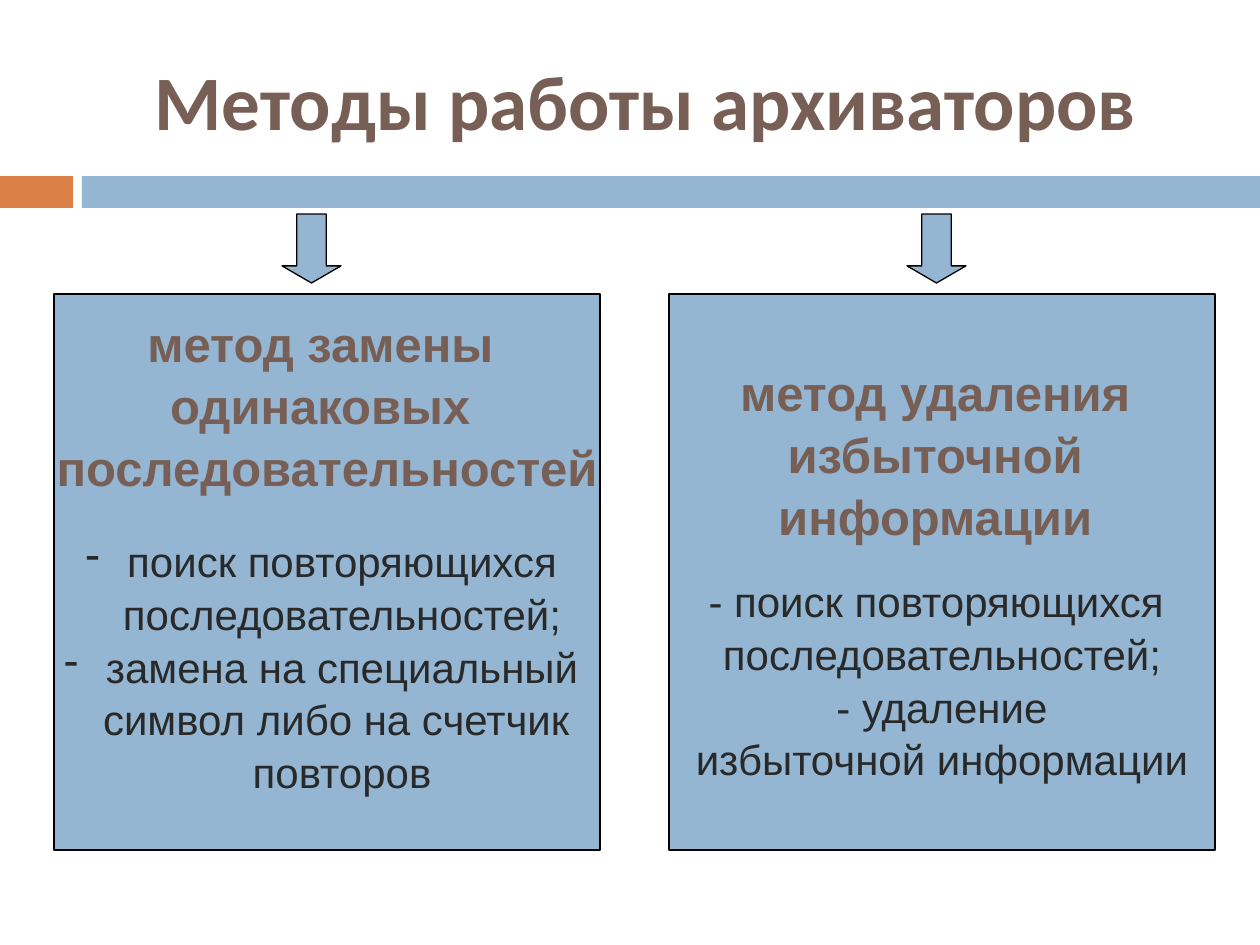
import dataclasses

import lxml.etree
import pptx
import pptx.dml.color
import pptx.enum.shapes
import pptx.enum.text
import pptx.oxml.ns
import pptx.util

SHAPES = pptx.enum.shapes.MSO_SHAPE
EMU_PER_PX = 914400 / 126


@dataclasses.dataclass(frozen=True)
class Theme:
    blue: str = "94B6D2"
    orange: str = "DD8047"
    brown: str = "775F55"
    dark: str = "292929"
    outline: str = "000000"
    title_font: str = "Calibri"
    body_font: str = "Arial"
    title_size: int = 44
    heading_size: int = 28
    body_size: int = 24


THEME = Theme()


def px(length):
    return pptx.util.Emu(round(length * EMU_PER_PX))


def rgb(value):
    return pptx.dml.color.RGBColor.from_string(value)


def write(para, text, *, size, color, font=THEME.body_font, bold=False,
          line_spacing=1.05, space_before=0):
    para.alignment = pptx.enum.text.PP_ALIGN.CENTER
    para.line_spacing = line_spacing
    para.space_before = pptx.util.Pt(space_before)
    for index, line in enumerate(text.split("\n")):
        if index:
            para.add_line_break()
        span = para.add_run()
        span.text = line
        span.font.name = font
        span.font.size = pptx.util.Pt(size)
        span.font.bold = bold
        span.font.color.rgb = rgb(color)


def add_bullet(para, mark, indent):
    properties = para._p.get_or_add_pPr()
    properties.set("marL", str(px(indent)))
    properties.set("indent", str(-px(indent)))
    bullet = lxml.etree.SubElement(properties, pptx.oxml.ns.qn("a:buChar"))
    bullet.set("char", mark)


def add_block(page, kind, left, top, width, height, fill, outline=None):
    shape = page.shapes.add_shape(kind, px(left), px(top), px(width), px(height))
    shape.shadow.inherit = False
    shape.fill.solid()
    shape.fill.fore_color.rgb = rgb(fill)
    if outline:
        shape.line.color.rgb = rgb(outline)
        shape.line.width = pptx.util.Pt(0.75)
    else:
        shape.line.fill.background()
    return shape


def add_title(page, text):
    title = page.shapes.title
    title.left, title.top, title.width, title.height = map(px, (84, 32, 1124, 136))
    frame = title.text_frame
    frame.auto_size = pptx.enum.text.MSO_AUTO_SIZE.NONE
    frame.vertical_anchor = pptx.enum.text.MSO_ANCHOR.MIDDLE
    write(frame.paragraphs[0], text, size=THEME.title_size, color=THEME.brown,
          font=THEME.title_font, bold=True, line_spacing=1.0)


def add_arrow(page, left):
    arrow = add_block(page, SHAPES.DOWN_ARROW, left, 214, 59, 69,
                      THEME.blue, THEME.outline)
    arrow.adjustments[0] = 0.5
    arrow.adjustments[1] = 0.29


def add_method(page, left, heading, steps, gap, bullet=None, bottom_inset=6):
    box = add_block(page, SHAPES.RECTANGLE, left, 294, 546, 556,
                    THEME.blue, THEME.outline)
    frame = box.text_frame
    frame.word_wrap = False
    frame.vertical_anchor = pptx.enum.text.MSO_ANCHOR.MIDDLE
    frame.margin_top = px(6)
    frame.margin_bottom = px(bottom_inset)
    for index, line in enumerate(heading):
        para = frame.add_paragraph() if index else frame.paragraphs[0]
        write(para, line, size=THEME.heading_size, color=THEME.brown, bold=True)
    for index, step in enumerate(steps):
        para = frame.add_paragraph()
        write(para, step, size=THEME.body_size, color=THEME.dark,
              space_before=0 if index else gap)
        if bullet:
            add_bullet(para, bullet, 30)


def main():
    deck = pptx.Presentation()
    deck.slide_width, deck.slide_height = px(1260), px(945)
    page = deck.slides.add_slide(deck.slide_layouts.get_by_name("Title Only"))

    add_block(page, SHAPES.RECTANGLE, 0, 176, 73, 32, THEME.orange)
    add_block(page, SHAPES.RECTANGLE, 82, 176, 1178, 32, THEME.blue)
    add_title(page, "Методы работы архиваторов")

    add_method(
        page, 54,
        ["метод замены ", "одинаковых ", "последовательностей"],
        [" поиск повторяющихся \nпоследовательностей;",
         " замена на специальный \nсимвол либо на счетчик \nповторов"],
        gap=21, bullet="-", bottom_inset=42)
    add_method(
        page, 669,
        ["метод удаления ", "избыточной ", "информации "],
        ["- поиск повторяющихся \nпоследовательностей;",
         " - удаление \nизбыточной информации"],
        gap=16)
    for left in (282, 907):
        add_arrow(page, left)

    deck.save("out.pptx")


if __name__ == "__main__":
    main()
